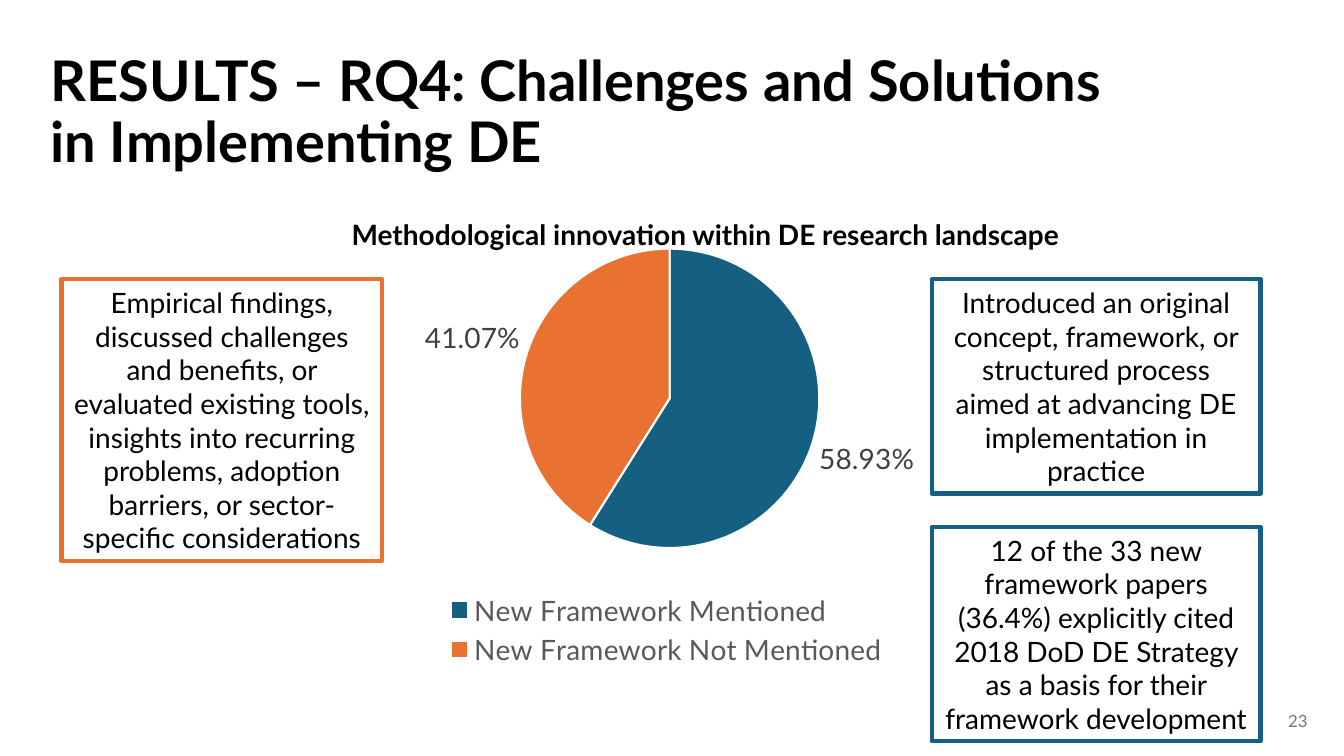
from lxml.etree import SubElement
from pptx import Presentation
from pptx.chart.data import CategoryChartData
from pptx.dml.color import RGBColor
from pptx.enum.chart import XL_CHART_TYPE, XL_LABEL_POSITION, XL_LEGEND_POSITION
from pptx.enum.shapes import MSO_SHAPE
from pptx.enum.text import MSO_ANCHOR, PP_ALIGN
from pptx.oxml.ns import qn
from pptx.util import Pt

COLORS = {
    "white": "FFFFFF",
    "black": "000000",
    "blue": "156082",
    "orange": "E97132",
    "label": "404040",
    "legend": "595959",
    "number": "767676",
}


def set_font(font, size, color, bold=False):
    values = {"name": "Lato", "size": Pt(size), "bold": bold}
    for name, value in values.items():
        setattr(font, name, value)
    font.color.rgb = RGBColor.from_string(COLORS[color])


def fill_text(box, text, size, color, bold, align, anchor):
    frame = box.text_frame
    frame.word_wrap = True
    frame.vertical_anchor = anchor
    para = frame.paragraphs[0]
    para.alignment = align
    span = para.add_run()
    span.text = text
    set_font(span.font, size, color, bold)
    return para


deck = Presentation()
deck.slide_width = Pt(960)
deck.slide_height = Pt(540)
page = deck.slides.add_slide(deck.slide_layouts[5])

title = page.shapes.title
title_place = {"left": 29, "top": 34.5, "width": 785, "height": 40}
for name, value in title_place.items():
    setattr(title, name, Pt(value))
title_para = fill_text(
    title, "RESULTS – RQ4: Challenges and Solutions in Implementing DE",
    40, "black", True, PP_ALIGN.LEFT, MSO_ANCHOR.TOP)
title_para.line_spacing = 0.9

chart_data = CategoryChartData(number_format="0.00%")
chart_data.categories = ["New Framework Mentioned", "New Framework Not Mentioned"]
chart_data.add_series("Series 1", (0.5893, 0.4107))
chart = page.shapes.add_chart(
    XL_CHART_TYPE.PIE, Pt(244), Pt(168), Pt(455), Pt(315), chart_data).chart
chart.has_title = False
set_font(chart.font, 20, "black")
chart.has_legend = True
legend = chart.legend
legend.position = XL_LEGEND_POSITION.BOTTOM
legend.include_in_layout = False
set_font(legend.font, 20, "legend")

plot = chart.plots[0]
plot.vary_by_categories = True
for index, color in enumerate(("blue", "orange")):
    slice_format = plot.series[0].points[index].format
    slice_format.fill.solid()
    slice_format.fill.fore_color.rgb = RGBColor.from_string(COLORS[color])
    slice_format.line.color.rgb = RGBColor.from_string(COLORS["white"])
    slice_format.line.width = Pt(1.5)

labels = plot.series[0].data_labels
label_values = {
    "show_value": True,
    "show_percentage": False,
    "number_format": "0.00%",
    "number_format_is_linked": False,
    "position": XL_LABEL_POSITION.OUTSIDE_END,
}
for name, value in label_values.items():
    setattr(labels, name, value)
set_font(labels.font, 20, "label")

plot_area = chart.element.find(".//" + qn("c:plotArea"))
legend_area = chart.element.find(".//" + qn("c:legend"))
layouts = [
    (plot_area, 0, {"layoutTarget": "inner", "xMode": "edge", "yMode": "edge",
                    "x": 0.28, "y": 0.03, "w": 0.47, "h": 0.68}),
    (legend_area, 1, {"xMode": "edge", "yMode": "edge",
                      "x": 0.16, "y": 0.8, "w": 0.7, "h": 0.19}),
]
for area, position, values in layouts:
    for old_layout in area.findall(qn("c:layout")):
        area.remove(old_layout)
    layout = SubElement(area, qn("c:layout"))
    area.insert(position, layout)
    manual = SubElement(layout, qn("c:manualLayout"))
    for name, value in values.items():
        SubElement(manual, qn(f"c:{name}")).set("val", str(value))

captions = [
    ("Methodological innovation within DE research landscape",
     (244, 152, 541, 31.5), 20, "black", True),
    ("23", (913, 504, 75, 22), 12, "number", False),
]
for text, place, size, color, bold in captions:
    box = page.shapes.add_textbox(*map(Pt, place))
    fill_text(box, text, size, color, bold, PP_ALIGN.LEFT, MSO_ANCHOR.TOP)

notes = [
    ("Empirical findings, discussed challenges and benefits, or evaluated existing "
     "tools, insights into recurring problems, adoption barriers, or sector-specific "
     "considerations", (44, 199.5, 229, 201), "orange"),
    ("Introduced an original concept, framework, or structured process aimed at "
     "advancing DE implementation in practice", (665.5, 199.5, 235, 153), "blue"),
    ("12 of the 33 new framework papers (36.4%) explicitly cited 2018 DoD DE Strategy "
     "as a basis for their framework development", (665.5, 376.5, 235, 153), "blue"),
]
for text, place, color in notes:
    box = page.shapes.add_shape(MSO_SHAPE.RECTANGLE, *map(Pt, place))
    box.shadow.inherit = False
    box.fill.solid()
    box.fill.fore_color.rgb = RGBColor.from_string(COLORS["white"])
    box.line.color.rgb = RGBColor.from_string(COLORS[color])
    box.line.width = Pt(3)
    fill_text(box, text, 20, "black", False, PP_ALIGN.CENTER, MSO_ANCHOR.MIDDLE)

deck.save("out.pptx")
